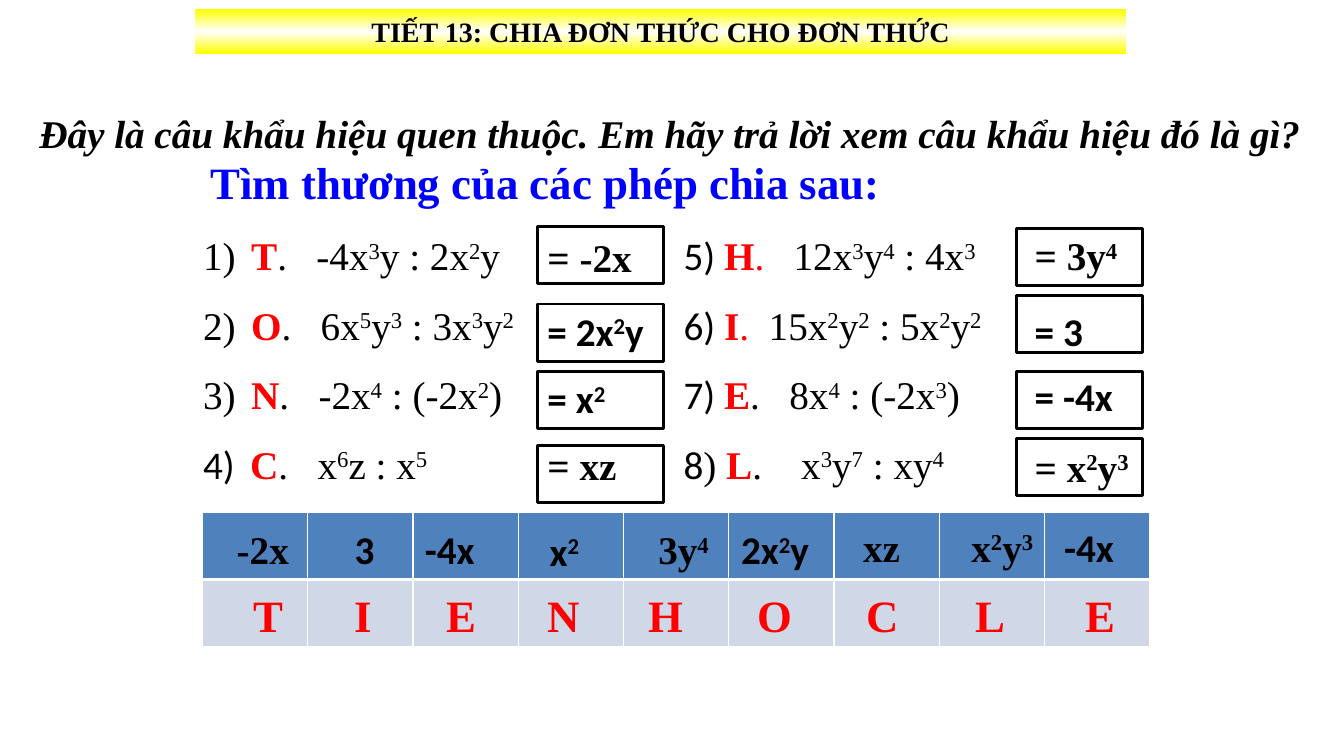
from copy import deepcopy

from pptx import Presentation
from pptx.dml.color import RGBColor
from pptx.enum.shapes import MSO_SHAPE
from pptx.enum.text import MSO_ANCHOR, PP_ALIGN
from pptx.oxml.ns import qn
from pptx.util import Inches, Pt
from lxml import etree

RECT = MSO_SHAPE.RECTANGLE
MIDDLE = MSO_ANCHOR.MIDDLE
CENTER = PP_ALIGN.CENTER
COLS, ROWS = 160, 90
WIDTH, HEIGHT = Inches(13.333), Inches(7.5)
TIMES, CALIBRI = "Times New Roman", "Calibri"
COLORS = {"black": "000000", "white": "FFFFFF", "red": "FF0000",
          "blue": "0000FF", "yellow": "FFFF00", "head": "4F81BD",
          "body": "D0D8E8"}

# lead in Calibri, gap in Times, letter, colour of the dots, dots, division
LEFT = [("", " ", "T", "black", ".   ", "-4x^3y : 2x^2y"),
        ("", " ", "O", "black", ".   ", "6x^5y^3 : 3x^3y^2"),
        ("", " ", "N", "black", ".   ", "-2x^4 : (-2x^2)"),
        (" ", "", "C", "black", ".   ", "x^6z : x^5")]
RIGHT = [("5) ", "", "H", "red", ".   ", "12x^3y^4 : 4x^3"),
         ("6) ", "", "I", "red", ".  ", "15x^2y^2 : 5x^2y^2"),
         ("7) ", "", "E", "black", ".   ", "8x^4 : (-2x^3)"),
         ("8", ") ", "L", "black", ".    ", "x^3y^7 : xy^4")]

# text column, text row, frame column, frame row, font, answer
ANSWERS = [(64, 27.2, 64, 27, TIMES, "= -2x"),
           (64, 36, 64, 36.2, CALIBRI, "= 2x^2y"),
           (64, 44, 64, 44.2, CALIBRI, "= x^2"),
           (64, 52, 64, 53, TIMES, "= xz"),
           (122, 27, 121, 27.2, TIMES, "= 3y^4"),
           (122, 36, 121, 35.2, CALIBRI, "= 3"),
           (122, 43.7, 121, 44.2, CALIBRI, "= -4x"),
           (122, 52.2, 121, 52.2, TIMES, "= x^2y^3")]

# quotient column, row, width, font, quotient, letter column, letter
KEYS = [(27, 62, 9.5, TIMES, "-2x", 29, "T"),
        (40, 62, 9.5, CALIBRI, " 3", 41, "I"),
        (49.4, 62, 8.5, CALIBRI, "-4x", 52, "E"),
        (63.2, 62.2, 10.3, CALIBRI, " x^2", 64, "N"),
        (77.2, 62, 9.8, TIMES, "3y^4", 76, "H"),
        (86, 62, 13, CALIBRI, " 2x^2y", 89, "O"),
        (100.4, 61.7, 17, TIMES, " xz", 102, "C"),
        (113.3, 61.7, 17, TIMES, " x^2y^3", 115, "L"),
        (125.5, 61.7, 9.5, CALIBRI, "-4x", 128, "E")]


def rgb(name):
    return RGBColor.from_string(COLORS[name])


def area(col, row, wide, high):
    """Turn grid units into left, top, width and height."""
    return (round(WIDTH * col / COLS), round(HEIGHT * row / ROWS),
            round(WIDTH * wide / COLS), round(HEIGHT * high / ROWS))


def style(font, face=TIMES, size=28, color="black", bold=False):
    font.name, font.size, font.bold = face, Pt(size), bold
    font.color.rgb = rgb(color)


def add_run(para, text):
    run = para.add_run()
    run.text = text
    return run


def add_math(para, text):
    """Add runs, raising the digit that follows each caret."""
    base, *rest = text.split("^")
    add_run(para, base)
    for part in rest:
        power = add_run(para, part[0])
        power.font._element.set("baseline", "30000")
        if part[1:]:
            add_run(para, part[1:])


def add_box(slide, spot):
    frame = slide.shapes.add_textbox(*area(*spot)).text_frame
    frame.word_wrap = True
    return frame


def add_label(slide, spot, text, **look):
    para = add_box(slide, spot).paragraphs[0]
    style(para.font, **{"bold": True, **look})
    add_math(para, text)
    return para


def add_list(slide, spot, items, auto=False):
    frame = add_box(slide, spot)
    for index, (lead, gap, letter, tone, dots, task) in enumerate(items):
        para = frame.add_paragraph() if index else frame.paragraphs[0]
        para.space_before = Pt(16 if index else 0)
        props = para._p.get_or_add_pPr()
        props.set("marL", str(Inches(0.38)))
        props.set("indent", str(-Inches(0.38)))
        if auto:
            etree.SubElement(props, qn("a:buAutoNum"), type="arabicParenR")
        style(para.font)
        if lead:
            add_run(para, lead).font.name = CALIBRI
        if gap:
            add_run(para, gap)
        style(add_run(para, letter).font, color="red", bold=True)
        add_run(para, dots).font.color.rgb = rgb(tone)
        add_math(para, task)


def add_frame(slide, col, row):
    box = slide.shapes.add_shape(RECT, *area(col, row, 15, 6.8))
    box.shadow.inherit = False
    box.fill.background()
    box.line.color.rgb = rgb("black")
    box.line.width = Pt(2)


def add_edges(cell, low):
    """Draw white cell borders, with the given width at the bottom."""
    props = cell._tc.get_or_add_tcPr()
    for index, (side, wide) in enumerate(zip("LRTB", (1, 1, 1, low))):
        line = etree.Element(qn("a:ln" + side), w=str(Pt(wide)))
        fill = etree.SubElement(line, qn("a:solidFill"))
        etree.SubElement(fill, qn("a:srgbClr"), val=COLORS["white"])
        props.insert(index, line)


def add_grid(slide):
    spot = area(24.1, 61, 112.8, 16)
    table = slide.shapes.add_table(2, len(KEYS), *spot).table
    for row, (color, low) in zip(table.rows, (("head", 3), ("body", 1))):
        for cell in row.cells:
            cell.fill.solid()
            cell.fill.fore_color.rgb = rgb(color)
            add_edges(cell, low)


def set_title(slide, text):
    title = slide.shapes.title
    title.left, title.top, title.width, title.height = area(23.2, 1.1, 110.9, 5.3)
    fill = title.fill
    fill.gradient()
    fill.gradient_angle = 90
    stops = fill._fill._gradFill.find(qn("a:gsLst"))
    stops.append(deepcopy(stops[0]))
    for stop, spot, color in zip(fill.gradient_stops, (0, 0.5, 1),
                                 ("yellow", "white", "yellow")):
        stop.position = spot
        stop.color.rgb = rgb(color)
    frame = title.text_frame
    frame.word_wrap = True
    frame.vertical_anchor = MIDDLE
    para = frame.paragraphs[0]
    para.alignment = CENTER
    style(para.font, size=20, bold=True)
    add_run(para, text)


def main():
    deck = Presentation()
    deck.slide_width, deck.slide_height = WIDTH, HEIGHT
    slide = deck.slides.add_slide(deck.slide_layouts[5])
    set_title(slide, "TIẾT 13: CHIA ĐƠN THỨC CHO ĐƠN THỨC")
    add_grid(slide)
    slogan = add_label(slide, (3.5, 12.4, 165, 6.8), "Đây là câu khẩu hiệu quen "
                       "thuộc. Em hãy trả lời xem câu khẩu hiệu đó là gì?")
    slogan.font.italic = True
    add_label(slide, (23.9, 17.8, 104, 7.7),
              "Tìm thương của các phép chia sau:", size=32, color="blue")
    add_list(slide, (23, 27, 48, 32), LEFT, auto=True)
    add_list(slide, (80.2, 27, 48, 32), RIGHT)
    for col, row, left, top, face, text in ANSWERS:
        add_label(slide, (col, row, 17, 6.8), text, face=face)
        add_frame(slide, left, top)
    for col, row, wide, face, text, left, letter in KEYS:
        add_label(slide, (col, row, wide, 6.8), text, face=face)
        add_label(slide, (left, 69.4, 6, 7.7), letter, size=32, color="red")
    deck.save("out.pptx")


if __name__ == "__main__":
    main()
